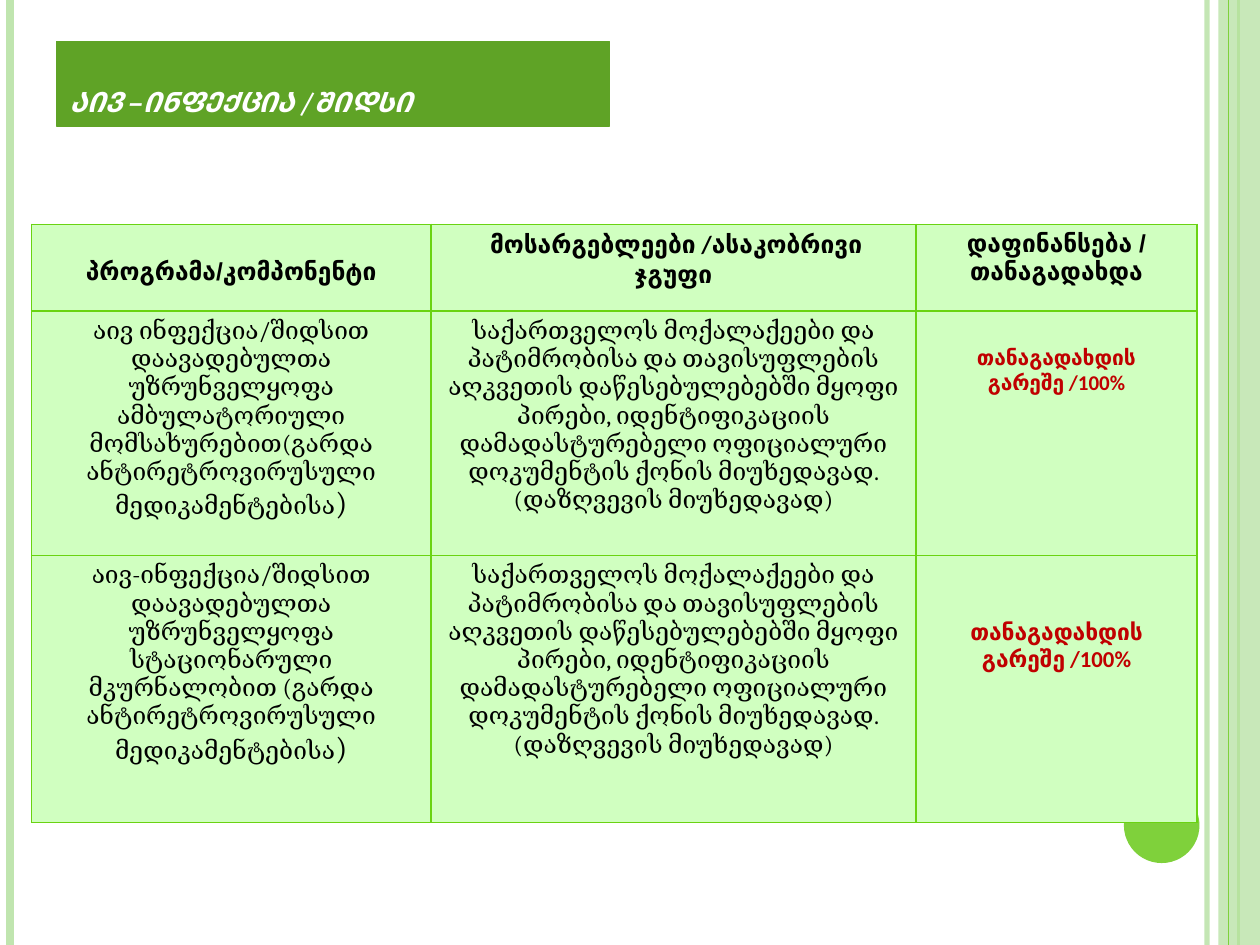
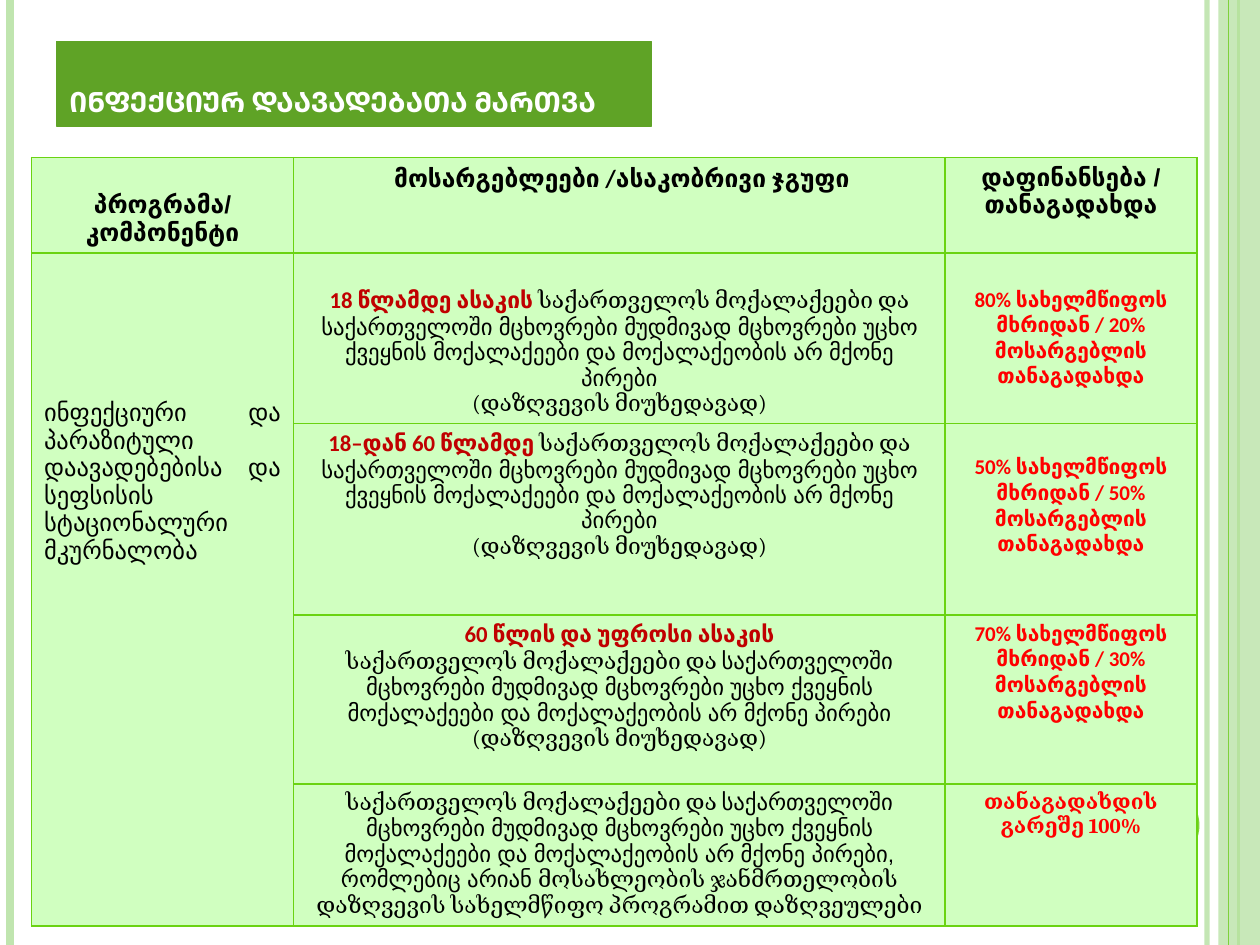
import lxml.etree
import pptx
import pptx.dml.color
import pptx.enum.shapes
import pptx.enum.text
import pptx.oxml.ns
import pptx.util

Inches = pptx.util.Inches
Pt = pptx.util.Pt
ALIGN = pptx.enum.text.PP_ALIGN

COLORS = {
    "pale_band": "C0E5AF",
    "accent": "7FD13B",
    "title_fill": "5FA326",
    "cell_fill": "D0FFC0",
    "border": "6AD312",
    "white": "FFFFFF",
    "black": "000000",
    "dark_red": "C00000",
    "red": "FF0000",
}


def text_style(name, size, color="black", bold=False, italic=False):
    """Return the format values of a run."""
    return {"name": name, "size": Pt(size), "color": color, "bold": bold, "italic": italic}


STYLES = {
    "head": text_style("Arial", 14, bold=True),
    "head_group": text_style("Calibri", 14, bold=True),
    "body": text_style("Cambria", 14),
    "bracket": text_style("Cambria", 18),
    "program": text_style("Arial", 14),
    "group": text_style("Cambria", 13),
    "group_sans": text_style("Arial", 13),
    "age": text_style("Calibri", 13, "dark_red", bold=True),
    "free": text_style("Calibri", 12, "dark_red", bold=True),
    "share": text_style("Calibri", 12, "red", bold=True),
    "share_serif": text_style("Cambria", 12, "red", bold=True),
}

CITIZENS = ("საქართველოს მოქალაქეები და ", "group")
RESIDENTS = (
    "საქართველოში მცხოვრები მუდმივად მცხოვრები უცხო ქვეყნის მოქალაქეები "
    "და მოქალაქეობის არ მქონე პირები"
)
INSURANCE = "(დაზღვევის მიუხედავად)"
DETAINEES = (
    "საქართველოს მოქალაქეები და პატიმრობისა და თავისუფლების აღკვეთის "
    "დაწესებულებებში მყოფი პირები, იდენტიფიკაციის დამადასტურებელი ოფიციალური "
    f"დოკუმენტის ქონის მიუხედავად. {INSURANCE}"
)
FREE = "თანაგადახდის გარეშე"


def rgb(color):
    """Return the colour object of a named colour."""
    return pptx.dml.color.RGBColor.from_string(COLORS[color])


def apply_format(target, values):
    """Set each attribute of the target from a dict."""
    for name, value in values.items():
        setattr(target, name, value)


def format_run(run, values):
    """Give a run its font and colour."""
    apply_format(run.font, {key: value for key, value in values.items() if key != "color"})
    run.font.color.rgb = rgb(values["color"])


def set_alpha(shape, percent):
    """Make the first solid colour of a shape partly transparent."""
    color = shape.element.spPr.find(".//" + pptx.oxml.ns.qn("a:srgbClr"))
    lxml.etree.SubElement(color, pptx.oxml.ns.qn("a:alpha")).set("val", str(percent * 1000))


def add_rule(slide, left, color, width):
    """Draw a vertical rule over the full slide height."""
    rule = slide.shapes.add_connector(
        pptx.enum.shapes.MSO_CONNECTOR.STRAIGHT, Inches(left), 0, Inches(left), Inches(7.5)
    )
    rule.line.color.rgb = rgb(color)
    rule.line.width = Pt(width)
    lxml.etree.SubElement(rule.element.spPr, pptx.oxml.ns.qn("a:effectLst"))
    return rule


def add_plain_shape(slide, kind, box, color):
    """Draw a filled shape without outline or shadow."""
    shape = slide.shapes.add_shape(kind, *map(Inches, box))
    shape.fill.solid()
    shape.fill.fore_color.rgb = rgb(color)
    shape.line.fill.background()
    shape.shadow.inherit = False
    return shape


def decorate_layout(slide, layout):
    """Build the edge bands and the circle, then hand them to the layout."""
    shapes = pptx.enum.shapes.MSO_SHAPE
    edge = add_rule(slide, 9.58, "pale_band", 3)
    set_alpha(edge, 93)
    left_edge = add_rule(slide, 0.08, "pale_band", 4.5)
    thick = add_rule(slide, 9.75, "accent", 1.5)
    thick.left = Inches(9.83)
    band = add_plain_shape(slide, shapes.RECTANGLE, (9.67, 0, 0.33, 7.5), "pale_band")
    set_alpha(band, 87)
    thin = add_rule(slide, 9.75, "accent", 0.75)
    circle = add_plain_shape(slide, shapes.OVAL, (8.92, 6.25, 0.6, 0.6), "accent")
    tree = layout.element.cSld.spTree
    for index, shape in enumerate((edge, left_edge, thick, band, thin, circle)):
        shape.element.xpath(".//p:cNvPr")[0].set("id", str(100 + index))
        tree.insert(2 + index, shape.element)


def fill_title(slide, text, box, italic):
    """Place the green title band."""
    title = slide.shapes.title
    apply_format(title, dict(zip(("left", "top", "width", "height"), map(Inches, box))))
    title.fill.solid()
    title.fill.fore_color.rgb = rgb("title_fill")
    title.line.color.rgb = rgb("title_fill")
    title.line.width = Pt(0.75)
    apply_format(title.text_frame, {
        "word_wrap": True,
        "auto_size": pptx.enum.text.MSO_AUTO_SIZE.NONE,
        "vertical_anchor": pptx.enum.text.MSO_ANCHOR.BOTTOM,
    })
    paragraph = title.text_frame.paragraphs[0]
    paragraph.alignment = ALIGN.LEFT
    run = paragraph.add_run()
    run.text = text
    format_run(run, text_style("Cambria", 20, "white", bold=True, italic=italic))
    run.font.element.set("cap", "small") if hasattr(run.font, "element") else run._r.get_or_add_rPr().set("cap", "small")


def add_borders(cell):
    """Draw the four borders of a cell."""
    properties = cell._tc.get_or_add_tcPr()
    for side in ("lnL", "lnR", "lnT", "lnB"):
        line = lxml.etree.SubElement(properties, pptx.oxml.ns.qn(f"a:{side}"), w=str(Pt(1)))
        fill = lxml.etree.SubElement(line, pptx.oxml.ns.qn("a:solidFill"))
        lxml.etree.SubElement(fill, pptx.oxml.ns.qn("a:srgbClr"), val=COLORS["border"])


def fill_cell(cell, paragraphs, gap=0, alignment=ALIGN.CENTER):
    """Write paragraphs of styled runs below a gap."""
    cell.margin_top = Inches(0.05 + gap)
    for index, runs in enumerate(paragraphs):
        frame = cell.text_frame
        paragraph = frame.add_paragraph() if index else frame.paragraphs[0]
        paragraph.alignment = alignment
        for text, style in runs:
            run = paragraph.add_run()
            run.text = text
            format_run(run, STYLES[style])


def add_program_table(slide, left, top, widths, heights, rows):
    """Draw a program table; a None entry joins the cell above."""
    frame = slide.shapes.add_table(
        len(heights), len(widths), Inches(left), Inches(top),
        Inches(sum(widths)), Inches(sum(heights)),
    )
    table = frame.table
    apply_format(table, {"first_row": False, "horz_banding": False})
    for column, width in zip(table.columns, widths):
        column.width = Inches(width)
    for row, height in zip(table.rows, heights):
        row.height = Inches(height)
    for row, entries in enumerate(rows):
        for column, entry in enumerate(entries):
            cell = table.cell(row, column)
            add_borders(cell)
            cell.fill.solid()
            cell.fill.fore_color.rgb = rgb("cell_fill")
            if entry:
                fill_cell(cell, *entry)
    return table


def header_row():
    """Return the column headings that both tables share."""
    return [
        ([[("პროგრამა/კომპონენტი", "head")]], 0.22),
        ([[(" მოსარგებლეები /ასაკობრივი ჯგუფი", "head_group")]],),
        ([[("დაფინანსება / თანაგადახდა", "head")]],),
    ]


def share_text(state, patient):
    """Return the paragraph on how the cost is split."""
    text = f"{state}% სახელმწიფოს მხრიდან / {patient}% მოსარგებლის თანაგადახდა"
    return [[(text, "share")]]


def build_hiv_slide(slide):
    """Fill the slide on HIV infection."""
    fill_title(slide, "აივ –ინფექცია /შიდსი", (0.45, 0.33, 4.39, 0.67), True)
    services = (
        ("აივ ინფექცია/შიდსით დაავადებულთა უზრუნველყოფა ამბულატორიული "
         "მომსახურებით(გარდა ანტირეტროვირუსული მედიკამენტებისა", "free", 0.22),
        ("აივ-ინფექცია/შიდსით დაავადებულთა უზრუნველყოფა სტაციონარული "
         "მკურნალობით (გარდა ანტირეტროვირუსული მედიკამენტებისა", "age", 0.45),
    )
    rows = [header_row()]
    for service, style, gap in services:
        rows.append([
            ([[(service, "body"), (")", "bracket")]],),
            ([[(DETAINEES, "body")]],),
            ([[(f"{FREE} /100%", style)]], gap),
        ])
    add_program_table(slide, 0.25, 1.78, (3.17, 3.85, 2.23), (0.69, 1.94, 2.12), rows)


def build_infection_slide(slide):
    """Fill the slide on managing infectious diseases."""
    fill_title(slide, "ინფექციურ დაავადებათა მართვა", (0.45, 0.33, 4.72, 0.67), False)
    program = (
        "ინფექციური და პარაზიტული დაავადებებისა და სეფსისის სტაციონალური მკურნალობა"
    )
    residents = (RESIDENTS, "group_sans")
    insurance = [(INSURANCE, "group")]
    insured = [
        CITIZENS,
        (f"{RESIDENTS}, რომლებიც არიან ", "group_sans"),
        ("მოსახლეობის ჯანმრთელობის დაზღვევის სახელმწიფო პროგრამით დაზღვეულები", "group"),
    ]
    rows = [
        header_row(),
        [
            ([[(program, "program")]], 1.11, ALIGN.JUSTIFY),
            ([[("18 წლამდე ასაკის ", "age"), CITIZENS, residents], insurance], 0.22),
            (share_text(80, 20), 0.22),
        ],
        [
            None,
            ([[("18–დან 60 წლამდე ", "age"), CITIZENS, residents], insurance],),
            (share_text(50, 50), 0.2),
        ],
        [
            None,
            ([[("60 წლის და უფროსი ასაკის", "age")], [CITIZENS, residents], insurance],),
            (share_text(70, 30),),
        ],
        [None, ([insured],), ([[(f"{FREE} 100%", "share_serif")]],)],
    ]
    table = add_program_table(
        slide, 0.25, 1.25, (2.08, 5.17, 2), (0.76, 1.34, 1.52, 1.34, 1.13), rows
    )
    table.cell(1, 0).merge(table.cell(4, 0))


def main():
    """Build and save the presentation."""
    presentation = pptx.Presentation()
    apply_format(presentation, {"slide_width": Inches(10), "slide_height": Inches(7.5)})
    layout = presentation.slide_layouts[5]
    for index, build in enumerate((build_hiv_slide, build_infection_slide)):
        slide = presentation.slides.add_slide(layout)
        if index == 0:
            decorate_layout(slide, layout)
        build(slide)
    presentation.save("out.pptx")


if __name__ == "__main__":
    main()
